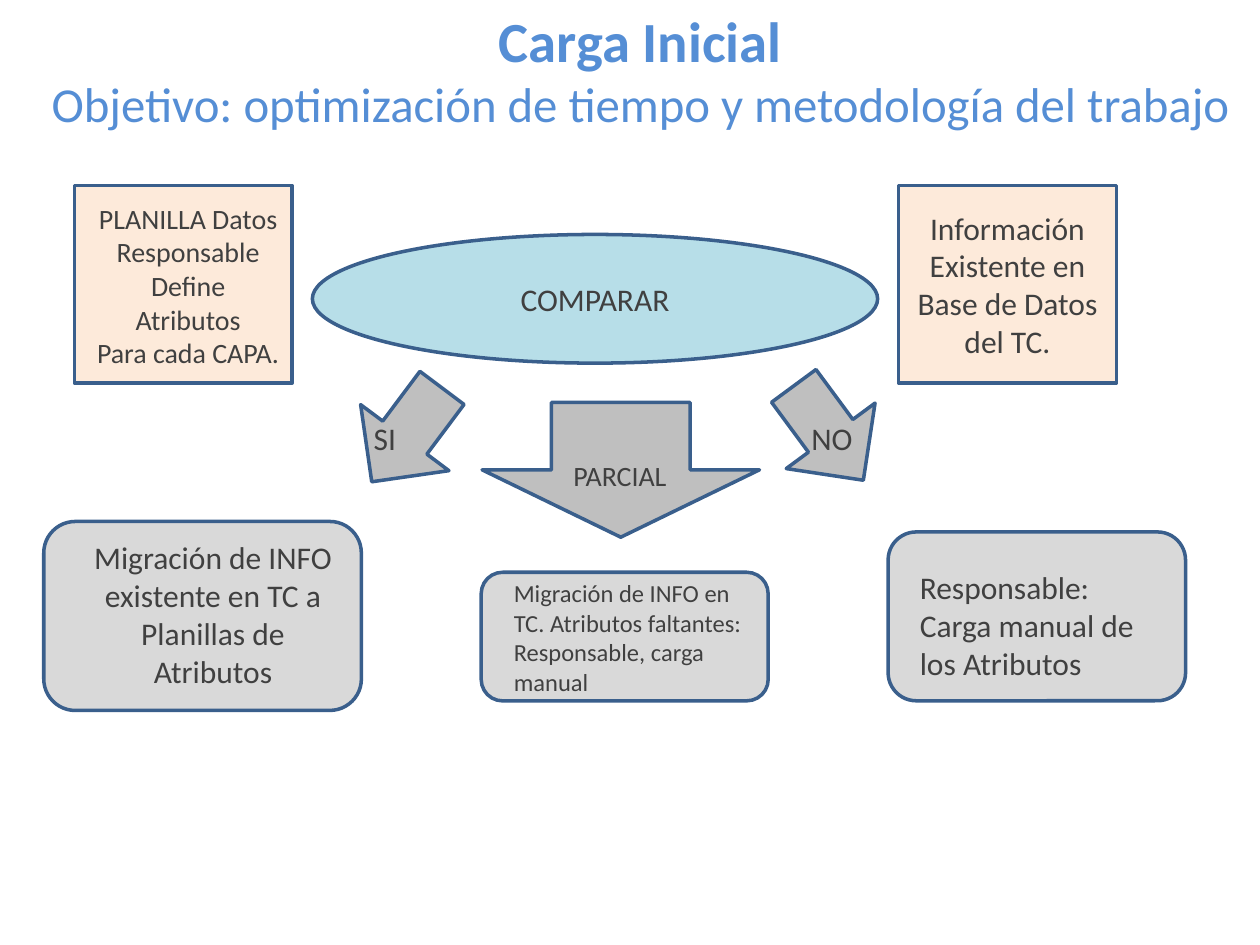
from pptx import Presentation
from pptx.dml.color import RGBColor
from pptx.enum.shapes import MSO_SHAPE as Shape
from pptx.enum.text import MSO_ANCHOR as Anchor, PP_ALIGN as Align
from pptx.util import Pt

FONT = "Calibri"
BLUE, OUTLINE, DARK = "558ED5", "3A5F8C", "404040"
PEACH, AQUA, SILVER, GRAY = "FDEADA", "B7DEE8", "D9D9D9", "BFBFBF"

TITLE = [("Carga Inicial", 32.4, True),
         ("Objetivo: optimización de tiempo y metodología del trabajo", 27.9, False)]
TITLE_BOX = (20, 3.5, 692, 80)

SHAPES = [
    (Shape.RECTANGLE, (42.5, 106, 124.5, 113), PEACH, 0),
    (Shape.RECTANGLE, (513.5, 106, 124.5, 113), PEACH, 0),
    (Shape.OVAL, (178.5, 134, 323, 73.5), AQUA, 0),
    (Shape.DOWN_ARROW, (201, 215, 63, 67), GRAY, 36.8),
    (Shape.DOWN_ARROW, (275.5, 230, 158.5, 77), GRAY, 0),
    (Shape.DOWN_ARROW, (442, 214, 63, 67), GRAY, 323.6),
    (Shape.ROUNDED_RECTANGLE, (25, 298, 181.5, 108), SILVER, 0),
    (Shape.ROUNDED_RECTANGLE, (275, 327, 164, 73.5), SILVER, 0),
    (Shape.ROUNDED_RECTANGLE, (507.5, 304, 170, 96.5), SILVER, 0),
]

LABELS = [
    (["PLANILLA Datos", "Responsable", "Define Atributos", "Para cada CAPA."],
     (47.5, 111.5, 120, 104.5), 16, Align.CENTER, Anchor.TOP),
    (["Información", "Existente en", "Base de Datos del TC."],
     (513.5, 106, 124.5, 113), 18, Align.CENTER, Anchor.MIDDLE),
    (["COMPARAR"], (178.5, 134, 323, 73.5), 18, Align.CENTER, Anchor.MIDDLE),
    (["SI"], (206.5, 236, 30, 29), 18, Align.LEFT, Anchor.TOP),
    (["PARCIAL"], (320.5, 258.5, 74, 26.5), 16, Align.LEFT, Anchor.TOP),
    (["NO"], (456.5, 236, 40, 29), 18, Align.LEFT, Anchor.TOP),
    (["Migración de INFO existente en TC a Planillas de Atributos"],
     (42.5, 304, 158.5, 94), 18, Align.CENTER, Anchor.TOP),
    (["Migración de INFO en TC. Atributos faltantes: Responsable, carga manual"],
     (286.5, 327, 153.5, 75), 14, Align.LEFT, Anchor.TOP),
    (["Responsable: Carga manual de los Atributos"],
     (518.5, 321, 142, 73), 18, Align.LEFT, Anchor.TOP),
]


def color(value):
    return RGBColor.from_string(value)


def add_outlined(slide, kind, box, fill, rotation):
    shape = slide.shapes.add_shape(kind, *map(Pt, box))
    shape.shadow.inherit = False
    shape.rotation = rotation
    shape.fill.solid()
    shape.fill.fore_color.rgb = color(fill)
    shape.line.color.rgb = color(OUTLINE)
    shape.line.width = Pt(2)


def add_text(slide, lines, box, align, anchor, ink):
    frame = slide.shapes.add_textbox(*map(Pt, box)).text_frame
    frame.word_wrap = True
    frame.vertical_anchor = anchor
    frame.text = "\n".join(text for text, size, bold in lines)
    for paragraph, (text, size, bold) in zip(frame.paragraphs, lines):
        paragraph.alignment = align
        paragraph.font.name = FONT
        paragraph.font.size = Pt(size)
        paragraph.font.bold = bold
        paragraph.font.color.rgb = color(ink)
    return frame


def main():
    presentation = Presentation()
    presentation.slide_width, presentation.slide_height = Pt(720), Pt(540)
    slide = presentation.slides.add_slide(presentation.slide_layouts[6])

    title = add_text(slide, TITLE, TITLE_BOX, Align.CENTER, Anchor.TOP, BLUE)
    title.margin_left = title.margin_right = title.margin_top = title.margin_bottom = 0
    for kind, box, fill, rotation in SHAPES:
        add_outlined(slide, kind, box, fill, rotation)
    for texts, box, size, align, anchor in LABELS:
        lines = [(text, size, False) for text in texts]
        add_text(slide, lines, box, align, anchor, DARK)

    presentation.save("out.pptx")


if __name__ == "__main__":
    main()
